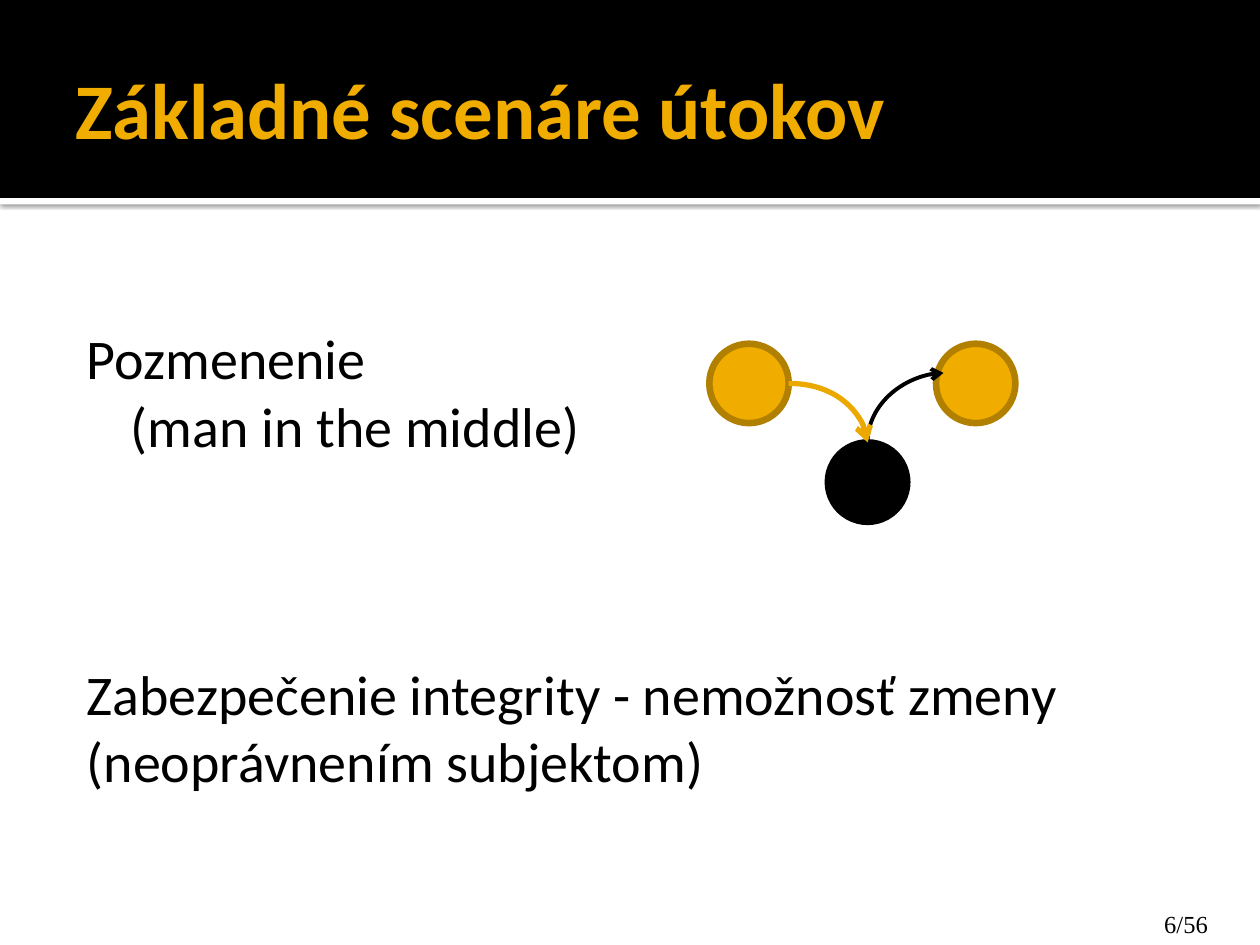
from lxml.etree import SubElement
from pptx import Presentation
from pptx.dml.color import RGBColor
from pptx.enum.shapes import MSO_CONNECTOR, MSO_SHAPE
from pptx.enum.text import MSO_ANCHOR
from pptx.oxml.ns import qn
from pptx.util import Cm, Pt

COLORS = {"black": "000000", "white": "FFFFFF", "gold": "F0AD00",
          "rim": "B28000", "arrow": "EBA900"}
TITLE = "Základné scenáre útokov"
BODY = [
    {"text": "Pozmenenie\v(man in the middle)", "left": 1.22, "indent": -0.89},
    {"text": "Zabezpečenie integrity - nemožnosť zmeny (neoprávnením subjektom)",
     "left": 0.33, "before": 115},
]
PAGE = "6/56"
D = 1.6
NODES = {"sender": (14.3, 6.93, "gold", "rim"),
         "receiver": (18.87, 6.93, "gold", "rim"),
         "attacker": (16.69, 8.92, "black", "black")}


def rgb(name):
    return RGBColor.from_string(COLORS[name])


def add_shape(kind, box, fill, line=None):
    sp = slide.shapes.add_shape(kind, *map(Cm, box))
    sp.shadow.inherit = False
    sp.fill.solid()
    sp.fill.fore_color.rgb = rgb(fill)
    if line:
        sp.line.color.rgb = rgb(line)
        sp.line.width = Pt(3.78)
    else:
        sp.line.fill.background()
    return sp


def add_text(paragraphs, box, size, color="black", font="Calibri", bold=False,
             anchor=MSO_ANCHOR.TOP, insets=(0.25, 0.13, 0.13, 0.13)):
    tf = slide.shapes.add_textbox(*map(Cm, box)).text_frame
    tf.word_wrap = True
    tf.vertical_anchor = anchor
    tf.margin_left, tf.margin_top, tf.margin_right, tf.margin_bottom = map(Cm, insets)
    for i, item in enumerate(paragraphs):
        p = tf.add_paragraph() if i else tf.paragraphs[0]
        p.text = item["text"]
        p.font.size, p.font.name, p.font.bold = Pt(size), font, bold
        p.font.color.rgb = rgb(color)
        p.space_before = Pt(item.get("before", 0))
        pPr = p._p.get_or_add_pPr()
        pPr.set("marL", str(Cm(item.get("left", 0))))
        pPr.set("indent", str(Cm(item.get("indent", 0))))


def add_arrow(start, end, color, width, upright=False):
    (x1, y1), (x2, y2) = start, end
    if upright:
        cx, cy = (x1 + x2) / 2, (y1 + y2) / 2
        half_w, half_h = abs(y2 - y1) / 2, abs(x2 - x1) / 2
        x1, y1, x2, y2 = cx + half_w, cy + half_h, cx - half_w, cy - half_h
    cn = slide.shapes.add_connector(MSO_CONNECTOR.CURVE, Cm(x1), Cm(y1), Cm(x2), Cm(y2))
    cn.line.color.rgb = rgb(color)
    cn.line.width = Pt(width)
    spPr = cn._element.spPr
    spPr.find(qn("a:prstGeom")).set("prst", "curvedConnector2")
    if upright:
        spPr.find(qn("a:xfrm")).set("rot", str(90 * 60000))
    SubElement(spPr.find(qn("a:ln")), qn("a:tailEnd"), type="arrow")
    SubElement(spPr, qn("a:effectLst"))


prs = Presentation()
prs.slide_width, prs.slide_height = Cm(25.4), Cm(19.05)
slide = prs.slides.add_slide(prs.slide_layouts[6])

strip = add_shape(MSO_SHAPE.RECTANGLE, (0, 3.99, 25.4, 0.13), "white")
effects = strip._element.spPr.find(qn("a:effectLst"))
shadow = SubElement(effects, qn("a:outerShdw"), blurRad=str(Pt(2.5)),
                    dist=str(Pt(0.8)), dir=str(90 * 60000), rotWithShape="0")
shade = SubElement(shadow, qn("a:srgbClr"), val=COLORS["black"])
SubElement(shade, qn("a:alpha"), val="60000")
add_shape(MSO_SHAPE.RECTANGLE, (0, 0, 25.4, 3.99), "black")

add_text([{"text": PAGE}], (23.22, 18.19, 2.18, 0.86), 14, font="Times New Roman",
         insets=(0.25, 0.13, 0.25, 0.13))
add_text([{"text": TITLE}], (1.27, 0.43, 22.86, 3.48), 45, color="gold", bold=True,
         anchor=MSO_ANCHOR.MIDDLE)
add_text(BODY, (1.27, 4.93, 22.86, 12.85), 32, insets=(0.15, 1.6, 0.25, 0.13))

for x, y, fill, line in NODES.values():
    add_shape(MSO_SHAPE.OVAL, (x, y, D, D), fill, line)

sx, sy = NODES["sender"][:2]
rx, ry = NODES["receiver"][:2]
ax, ay = NODES["attacker"][:2]
attacker_top = (ax + D / 2, ay)
add_arrow(attacker_top, (rx + 0.15, ry + 0.59), "black", 2.25, upright=True)
add_arrow((sx + D, sy + D / 2), attacker_top, "arrow", 3)

prs.save("out.pptx")
